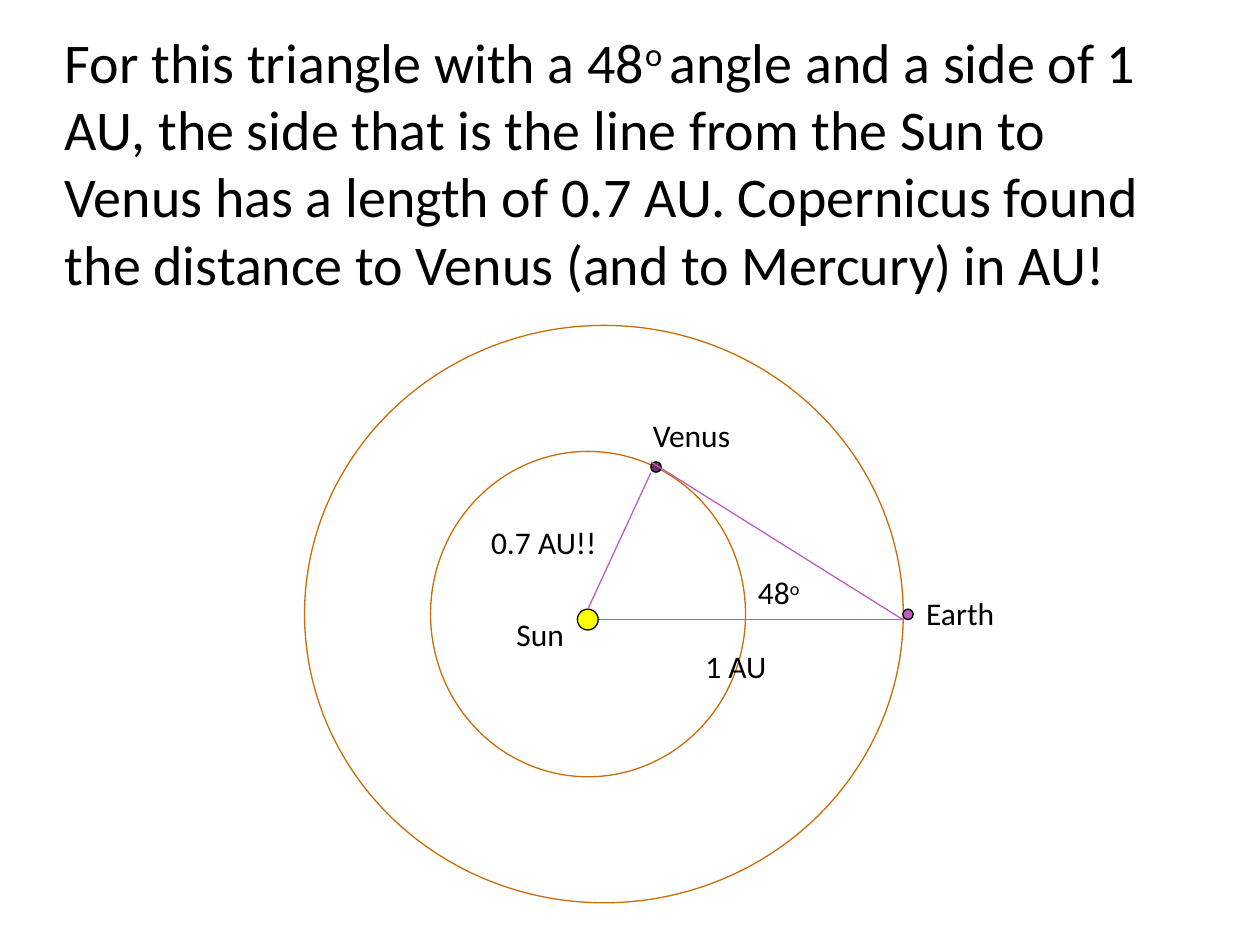
import pptx
import pptx.util
import pptx.dml.color
import pptx.enum.shapes
import pptx.enum.text
import lxml.etree
from pptx.util import Cm

COLORS = {
    "text": "000000",
    "orbit": "C96D07",
    "sun": "FFFF00",
    "venus": "663366",
    "earth": "BC5FBC",
    "ray": "BC5FBC",
}


class OrbitSlide:
    font = "Calibri"
    line_width = pptx.util.Pt(0.75)

    def __init__(self, prs):
        self.s = prs.slides.add_slide(prs.slide_layouts[6])

    def rgb(self, name):
        return pptx.dml.color.RGBColor.from_string(COLORS[name])

    def outline(self, sp, color):
        sp.line.color.rgb = self.rgb(color)
        sp.line.width = self.line_width

    def text(self, x, y, w, h, runs, size=18):
        tf = self.s.shapes.add_textbox(Cm(x), Cm(y), Cm(w), Cm(h)).text_frame
        tf.word_wrap = True
        tf.auto_size = pptx.enum.text.MSO_AUTO_SIZE.SHAPE_TO_FIT_TEXT
        p = tf.paragraphs[0]
        for words, raised in runs:
            r = p.add_run()
            r.text = words
            r.font.name = self.font
            r.font.size = pptx.util.Pt(size)
            r.font.color.rgb = self.rgb("text")
            if raised:
                r.font._element.set("baseline", "30000")

    def ellipse(self, x, y, w, h, line, fill=None):
        sp = self.s.shapes.add_shape(
            pptx.enum.shapes.MSO_SHAPE.OVAL, Cm(x), Cm(y), Cm(w), Cm(h))
        sp.shadow.inherit = False
        if fill:
            sp.fill.solid()
            sp.fill.fore_color.rgb = self.rgb(fill)
        else:
            sp.fill.background()
        self.outline(sp, line)

    def ray(self, x1, y1, x2, y2):
        sp = self.s.shapes.add_connector(
            pptx.enum.shapes.MSO_CONNECTOR.STRAIGHT,
            Cm(x1), Cm(y1), Cm(x2), Cm(y2))
        self.outline(sp, "ray")
        lxml.etree.SubElement(
            sp._element.spPr, pptx.oxml.ns.qn("a:effectLst"))


def main():
    prs = pptx.Presentation()
    prs.slide_width, prs.slide_height = Cm(25.4), Cm(19.05)
    slide = OrbitSlide(prs)

    slide.text(1.06, 0.43, 23.04, 5.74, [
        ("For this triangle with a 48", False),
        ("o ", True),
        ("angle and a side of 1 AU, the side that is the line from the Sun "
         "to Venus has a length of 0.7 AU. Copernicus found the distance to "
         "Venus (and to Mercury) in AU!", False),
    ], size=32)

    for x, y, w, h in [(6.14, 6.56, 12.07, 11.64), (8.68, 9.1, 6.35, 6.56)]:
        slide.ellipse(x, y, w, h, "orbit")

    for body, x, y, d in [("sun", 11.64, 12.28, 0.42),
                          ("venus", 13.12, 9.31, 0.21),
                          ("earth", 18.2, 12.28, 0.21)]:
        slide.ellipse(x, y, d, d, "text", body)

    for ends in [(12.07, 12.49, 18.2, 12.49),
                 (13.12, 9.31, 18.2, 12.49),
                 (13.12, 9.53, 11.85, 12.28)]:
        slide.ray(*ends)

    slide.text(15.03, 11.43, 1.9, 1.02, [("48", False), ("o", True)])
    for label, x, y in [("1 AU", 13.97, 12.91),
                        ("Earth", 18.42, 11.85),
                        ("Sun", 10.16, 12.28),
                        ("Venus", 12.91, 8.26),
                        ("0.7 AU!!", 9.65, 10.41)]:
        slide.text(x, y, 2.75, 1.02, [(label, False)])

    prs.save("out.pptx")


if __name__ == "__main__":
    main()
